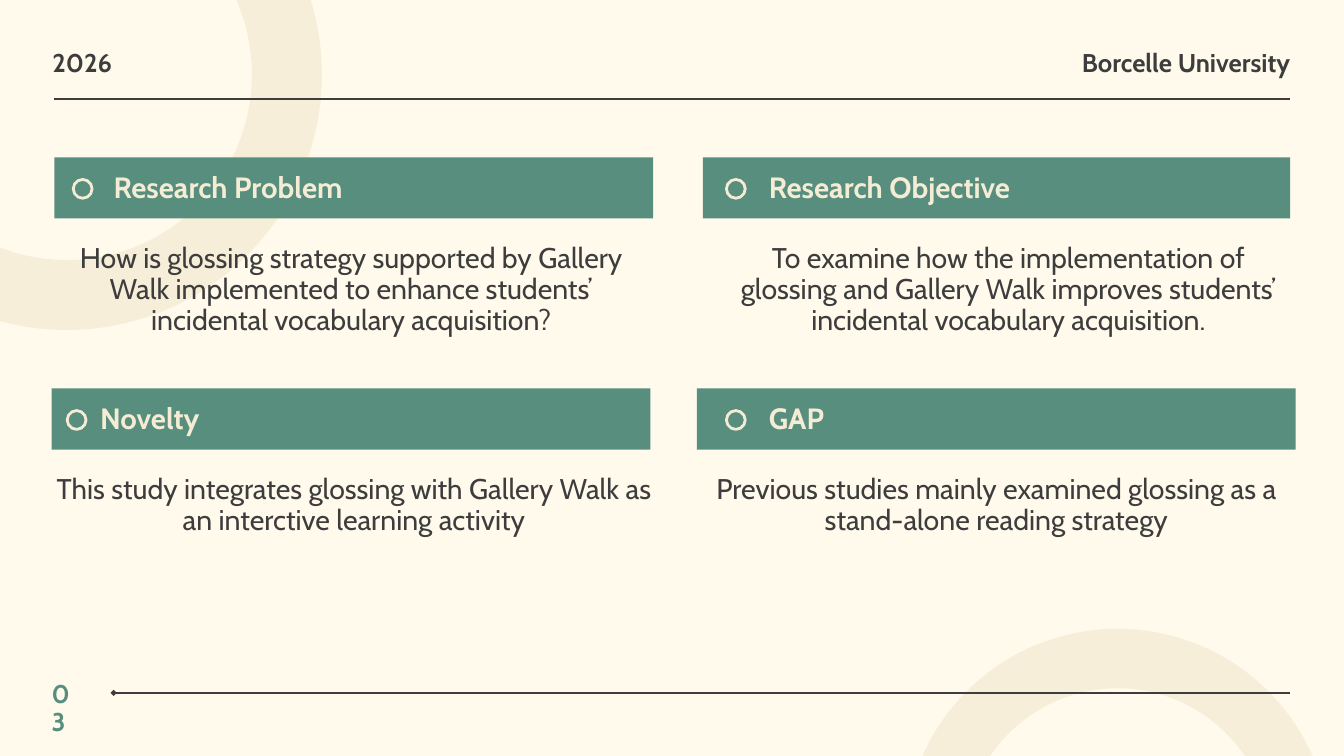
from lxml.etree import SubElement
from pptx import Presentation
from pptx.dml.color import RGBColor
from pptx.enum.shapes import MSO_CONNECTOR, MSO_SHAPE
from pptx.enum.text import PP_ALIGN
from pptx.oxml.ns import qn
from pptx.util import Inches, Pt

COLORS = {"paper": "FFFAEC", "sand": "F5ECD5", "green": "578E7E", "ink": "3D3D3D"}
LEFT, CENTER, RIGHT = PP_ALIGN.LEFT, PP_ALIGN.CENTER, PP_ALIGN.RIGHT
JUSTIFY = PP_ALIGN.JUSTIFY


def add_text(words, left, top, width, height, size, spacing, color, align, bold=True):
    box = page.shapes.add_textbox(Inches(left), Inches(top), Inches(width), Inches(height))
    frame = box.text_frame
    frame.word_wrap = True
    frame.margin_left = frame.margin_right = frame.margin_top = frame.margin_bottom = 0
    para = frame.paragraphs[0]
    para.alignment = align
    para.line_spacing = Pt(spacing)
    span = para.add_run()
    span.text = words
    span.font.name = "Cabin"
    span.font.size = Pt(size)
    span.font.bold = bold
    span.font.color.rgb = RGBColor.from_string(COLORS[color])


def add_figure(kind, left, top, width, height, fill=None, line_width=None):
    figure = page.shapes.add_shape(kind, Inches(left), Inches(top), Inches(width), Inches(height))
    figure.shadow.inherit = False
    if fill:
        figure.fill.solid()
        figure.fill.fore_color.rgb = RGBColor.from_string(COLORS[fill])
    else:
        figure.fill.background()
    if line_width:
        figure.line.color.rgb = RGBColor.from_string(COLORS["sand"])
        figure.line.width = Pt(line_width)
    else:
        figure.line.fill.background()
    return figure


deck = Presentation()
deck.slide_width, deck.slide_height = Inches(20), Inches(11.25)
page = deck.slides.add_slide(deck.slide_layouts[6])
page.background.fill.solid()
page.background.fill.fore_color.rgb = RGBColor.from_string(COLORS["paper"])

for left, top, diameter, thickness in [(-2.29, -2.17, 6.56, 75), (13.9, 9.8, 5.46, 63.75)]:
    ring = add_figure(MSO_SHAPE.OVAL, left, top, diameter, diameter, line_width=thickness)
    ring_color = ring.line._ln.find(".//" + qn("a:srgbClr"))
    SubElement(ring_color, qn("a:alpha"), val="80000")

for start, height, head in [(0.8, 1.48, None), (1.69, 10.31, "diamond")]:
    rule = page.shapes.add_connector(
        MSO_CONNECTOR.STRAIGHT, Inches(start), Inches(height), Inches(19.2), Inches(height)
    )
    rule.line.color.rgb = RGBColor.from_string(COLORS["ink"])
    rule.line.width = Pt(2.25)
    if head:
        SubElement(rule.line._ln, qn("a:headEnd"), type=head)
    SubElement(rule._element.spPr, qn("a:effectLst"))

for words, left, top, width, color, align in [
    ("2026", 0.78, 0.73, 0.92, "ink", JUSTIFY),
    ("Borcelle University", 15.9, 0.73, 3.3, "ink", RIGHT),
    ("03", 0.77, 10.12, 0.46, "green", JUSTIFY),
]:
    add_text(words, left, top, width, 0.42, 27.5, 30.2, color, align)

sections = [
    ("Research Problem", 2.34, 0.81, 8.91, 1.09, 1.69, 0.77, 8.91, 1.39,
     "How is glossing strategy supported by Gallery Walk implemented to enhance "
     "students’ incidental vocabulary acquisition?"),
    ("Research Objective", 2.34, 10.46, 8.74, 10.81, 11.44, 10.81, 8.39, 1.39,
     "To examine how the implementation of glossing and Gallery Walk improves "
     "students’ incidental vocabulary acquisition."),
    ("Novelty", 5.78, 0.77, 8.91, 1, 1.49, 0.81, 8.91, 0.93,
     "This study integrates glossing with Gallery Walk as an interctive learning activity"),
    ("GAP", 5.78, 10.37, 8.91, 10.81, 11.44, 10.37, 8.91, 0.93,
     "Previous studies mainly examined glossing as a stand-alone reading strategy"),
]
for (heading, top, bar_left, bar_width, dot_left, heading_left,
     body_left, body_width, body_height, body) in sections:
    add_figure(MSO_SHAPE.RECTANGLE, bar_left, top, bar_width, 0.91, "green")
    add_figure(MSO_SHAPE.OVAL, dot_left, top + 0.33, 0.28, 0.28, "green", 3)
    add_text(heading, heading_left, top + 0.22, 7.47, 0.49, 31.4, 34.6, "sand", LEFT)
    add_text(body, body_left, top + 1.27, body_width, body_height, 30.5, 33.6, "ink", CENTER, False)

deck.save("out.pptx")
